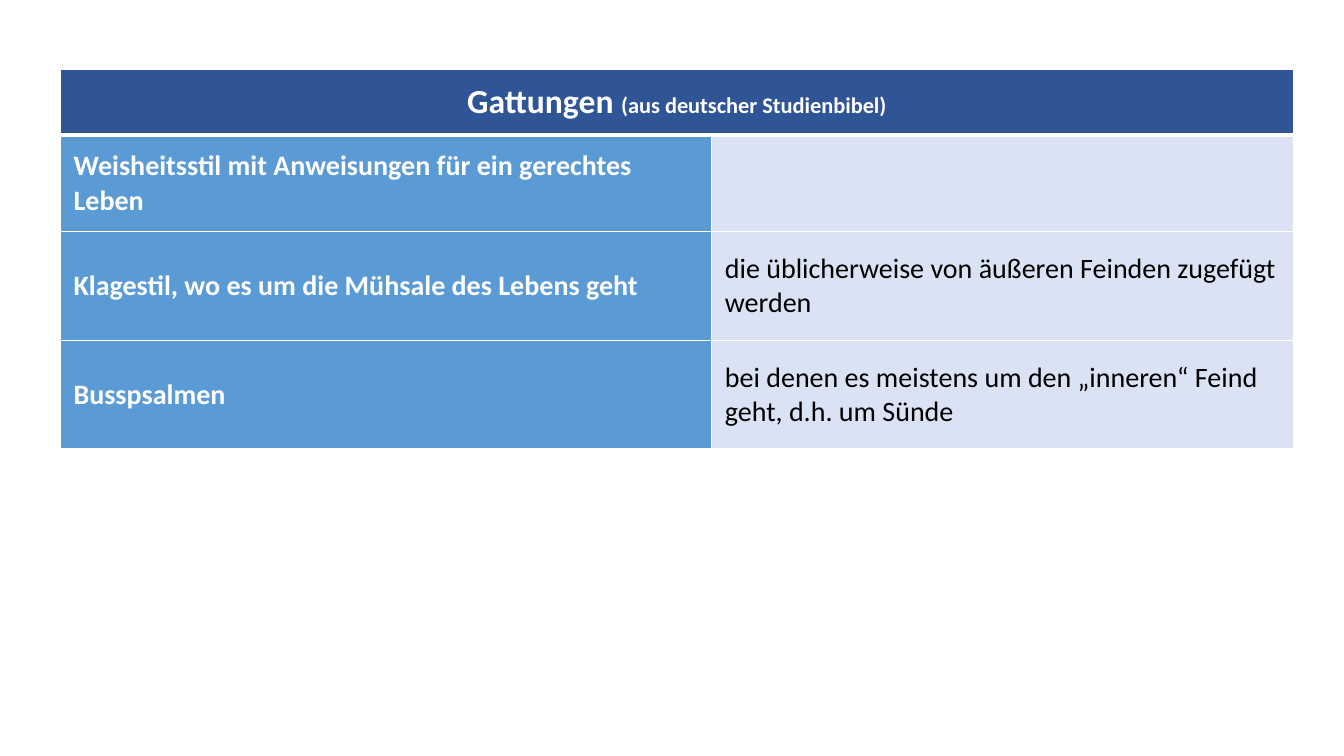
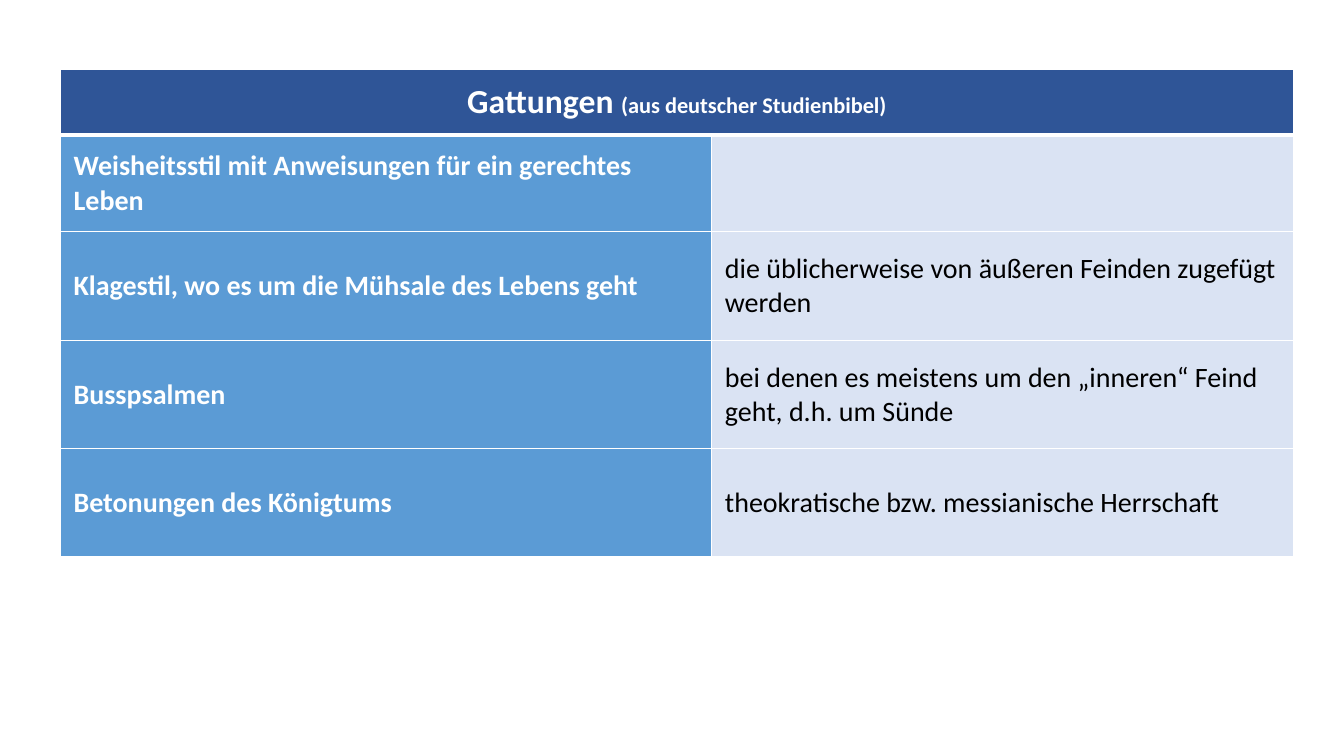
import pptx
import pptx.util
import pptx.dml.color
import pptx.enum.text
import lxml.etree
from pptx.util import Inches

RGBColor = pptx.dml.color.RGBColor
NAVY = RGBColor(0x2F, 0x55, 0x97)
BLUE = RGBColor(0x5B, 0x9B, 0xD5)
PALE = RGBColor(0xDA, 0xE3, 0xF3)
WHITE = RGBColor(0xFF, 0xFF, 0xFF)
BLACK = RGBColor(0, 0, 0)
FONT = "Calibri"
NS = "http://schemas.openxmlformats.org/drawingml/2006/main"

LEFT, TOP = 0.6, 0.69
COLS = [6.46, 5.77]
HIGH = [0.65, 0.96, 1.08, 1.07, 1.07]
HEAD = [("Gattungen ", 24), ("(aus deutscher Studienbibel)", 16)]
KINDS = [
    ("Weisheitsstil mit Anweisungen für ein gerechtes Leben", ""),
    ("Klagestil, wo es um die Mühsale des Lebens geht",
     "die üblicherweise von äußeren Feinden zugefügt werden"),
    ("Busspsalmen",
     "bei denen es meistens um den „inneren“ Feind geht, d.h. um Sünde"),
    ("Betonungen des Königtums",
     "theokratische bzw. messianische Herrschaft"),
]


def write(cell, text, size=20, color=WHITE, bold=True):
    """Append one formatted run to the cell's paragraph."""
    run = cell.text_frame.paragraphs[0].add_run()
    run.text = text
    run.font.name = FONT
    run.font.size = pptx.util.Pt(size)
    run.font.bold = bold
    run.font.color.rgb = color


def style(cell, fill, top=1, bottom=1):
    """Set white borders (widths in points), margins, anchor and fill."""
    props = cell._tc.get_or_add_tcPr()
    for side, width in (("L", 1), ("R", 1), ("T", top), ("B", bottom)):
        line = lxml.etree.SubElement(props, f"{{{NS}}}ln{side}",
                                     w=str(pptx.util.Pt(width)))
        solid = lxml.etree.SubElement(line, f"{{{NS}}}solidFill")
        lxml.etree.SubElement(solid, f"{{{NS}}}srgbClr", val=str(WHITE))
    cell.margin_left = cell.margin_right = Inches(0.13)
    cell.margin_top = cell.margin_bottom = 0
    cell.vertical_anchor = pptx.enum.text.MSO_ANCHOR.MIDDLE
    cell.fill.solid()
    cell.fill.fore_color.rgb = fill


deck = pptx.Presentation()
deck.slide_width = Inches(13.33)
deck.slide_height = Inches(7.5)

for count in (3, 4):
    slide = deck.slides.add_slide(deck.slide_layouts[6])
    rows = HIGH[:count + 1]
    table = slide.shapes.add_table(
        len(rows), len(COLS), Inches(LEFT), Inches(TOP),
        Inches(sum(COLS)), Inches(sum(rows))).table
    for col, width in zip(table.columns, COLS):
        col.width = Inches(width)
    for row, height in zip(table.rows, rows):
        row.height = Inches(height)

    title = table.cell(0, 0)
    title.merge(table.cell(0, 1))
    for cell in table.rows[0].cells:
        style(cell, NAVY, bottom=3)
    for text, size in HEAD:
        write(title, text, size=size)
    title.text_frame.paragraphs[0].alignment = pptx.enum.text.PP_ALIGN.CENTER

    for i, (kind, note) in enumerate(KINDS[:count], 1):
        top = 3 if i == 1 else 1
        style(table.cell(i, 0), BLUE, top=top)
        write(table.cell(i, 0), kind)
        style(table.cell(i, 1), PALE, top=top)
        if note:
            write(table.cell(i, 1), note, color=BLACK, bold=False)

deck.save("out.pptx")
